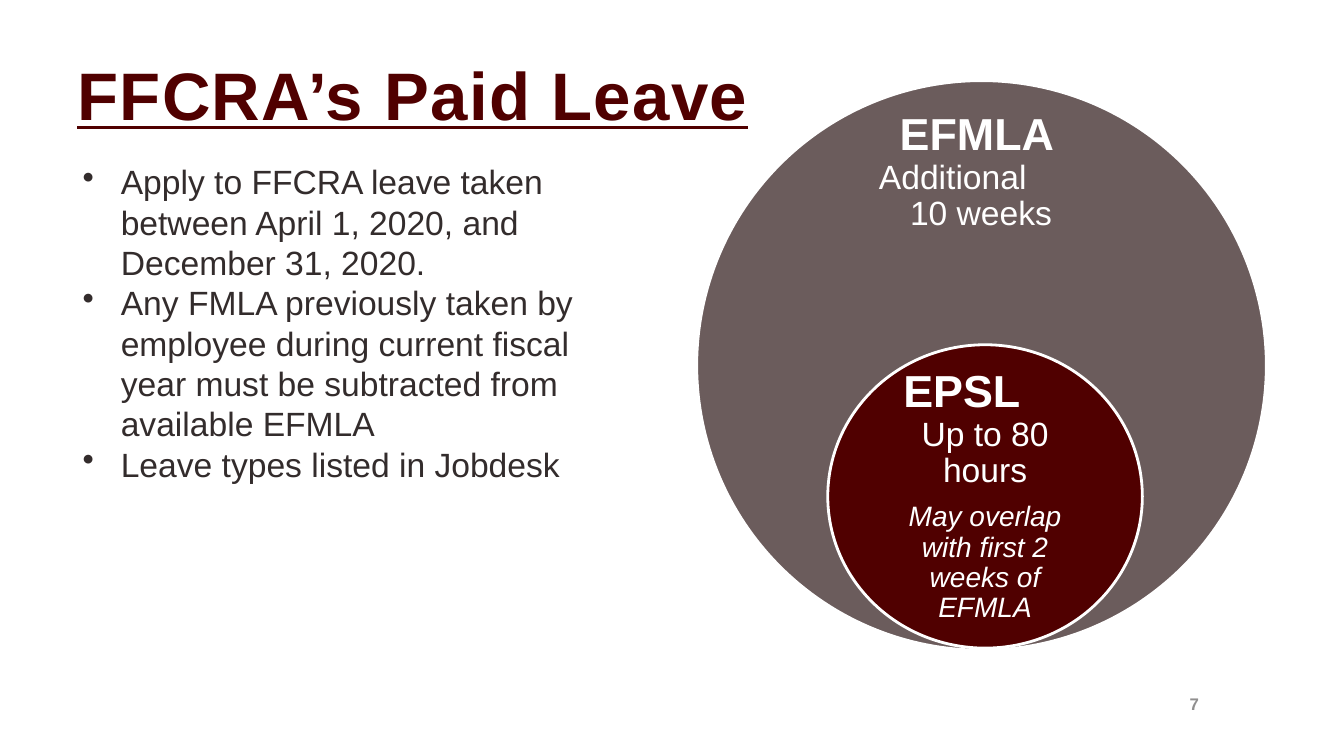
from lxml import etree
from pptx import Presentation
from pptx.dml.color import RGBColor
from pptx.enum import shapes, text
from pptx.oxml import ns
from pptx.util import Inches, Pt

MAROON = RGBColor(0x50, 0x00, 0x00)
TAUPE = RGBColor(0x6B, 0x5C, 0x5C)
CHARCOAL = RGBColor(0x33, 0x2C, 0x2C)
GRAY = RGBColor(0x90, 0x8F, 0x8F)
WHITE = RGBColor(0xFF, 0xFF, 0xFF)

LEAVE_RULES = [
    "Apply to FFCRA leave taken between April 1, 2020, and December 31, 2020.",
    "Any FMLA previously taken by employee during current fiscal year must be "
    "subtracted from available EFMLA",
    "Leave types listed in Jobdesk",
]


def add_circle(slide, left, top, width, height, color):
    circle = slide.shapes.add_shape(
        shapes.MSO_SHAPE.OVAL, Inches(left), Inches(top), Inches(width), Inches(height))
    circle.shadow.inherit = False
    circle.fill.solid()
    circle.fill.fore_color.rgb = color
    circle.line.color.rgb = WHITE
    circle.line.width = Pt(2)


def add_text_frame(slide, left, top, width, height, anchor=text.MSO_ANCHOR.MIDDLE):
    box = slide.shapes.add_textbox(
        Inches(left), Inches(top), Inches(width), Inches(height))
    frame = box.text_frame
    frame.word_wrap = True
    frame.vertical_anchor = anchor
    return frame


def add_paragraph(frame, content, size, color, bold=False, italic=False):
    first = frame.paragraphs[0]
    paragraph = frame.add_paragraph() if first.runs else first
    paragraph.add_run().text = content
    font = paragraph.font
    font.name = "Arial"
    font.size = Pt(size)
    font.color.rgb = color
    font.bold = bold
    font.italic = italic
    return paragraph


def indent_paragraph(paragraph, margin, first_line=0):
    properties = paragraph._p.get_or_add_pPr()
    properties.set("marL", str(Inches(margin)))
    properties.set("indent", str(Inches(first_line)))
    return properties


def add_title(slide, content):
    frame = add_text_frame(slide, 0.67, 0.3, 12, 1.25)
    paragraph = add_paragraph(frame, content, 48, MAROON, bold=True)
    run = paragraph.runs[0]
    run.font.underline = True
    run._r.get_or_add_rPr().set("spc", "100")


def add_bullets(slide, items):
    frame = add_text_frame(slide, 0.72, 1.55, 5.49, 3.74, text.MSO_ANCHOR.TOP)
    for item in items:
        paragraph = add_paragraph(frame, item, 24, CHARCOAL)
        properties = indent_paragraph(paragraph, 0.38, -0.38)
        bullet = etree.Element(ns.qn("a:buChar"), char="•")
        properties.insert(0, bullet)


def add_circle_label(slide, left, top, width, height, right_inset, lines):
    frame = add_text_frame(slide, left, top, width, height)
    frame.margin_left = 0
    frame.margin_right = Inches(right_inset)
    frame.margin_top = frame.margin_bottom = Inches(0.25)
    for content, size, margin, space_after, bold, italic in lines:
        paragraph = add_paragraph(frame, content, size, WHITE, bold, italic)
        paragraph.alignment = text.PP_ALIGN.CENTER
        paragraph.line_spacing = 0.9
        paragraph.space_after = Pt(space_after)
        indent_paragraph(paragraph, margin)


def add_slide_number(slide, number):
    frame = add_text_frame(slide, 8.88, 6.86, 3.11, 0.25)
    paragraph = add_paragraph(frame, number, 12, GRAY, bold=True)
    paragraph.alignment = text.PP_ALIGN.RIGHT


def main():
    presentation = Presentation()
    presentation.slide_width = Inches(13.33)
    presentation.slide_height = Inches(7.5)
    slide = presentation.slides.add_slide(presentation.slide_layouts[6])
    add_circle(slide, 6.91, 0.8, 5.65, 5.65, TAUPE)
    add_circle_label(slide, 8.25, 1.23, 2.97, 0.96, 0.57, [
        ("EFMLA", 32, 0.48, 0, True, False),
        ("Additional", 24, 0, 0, False, False),
        ("10 weeks", 24, 0.56, 0, False, False),
    ])
    add_circle(slide, 8.21, 3.42, 3.12, 3.01, MAROON)
    add_circle_label(slide, 8.4, 4.17, 2.48, 1.51, 0.2, [
        ("EPSL", 32, 0, 0, True, False),
        ("Up to 80 hours", 24, 0.46, 9, False, False),
        ("May overlap with first 2 weeks of EFMLA", 20, 0.46, 0, False, True),
    ])
    add_bullets(slide, LEAVE_RULES)
    add_title(slide, "FFCRA’s Paid Leave")
    add_slide_number(slide, "7")
    presentation.save("out.pptx")


if __name__ == "__main__":
    main()
